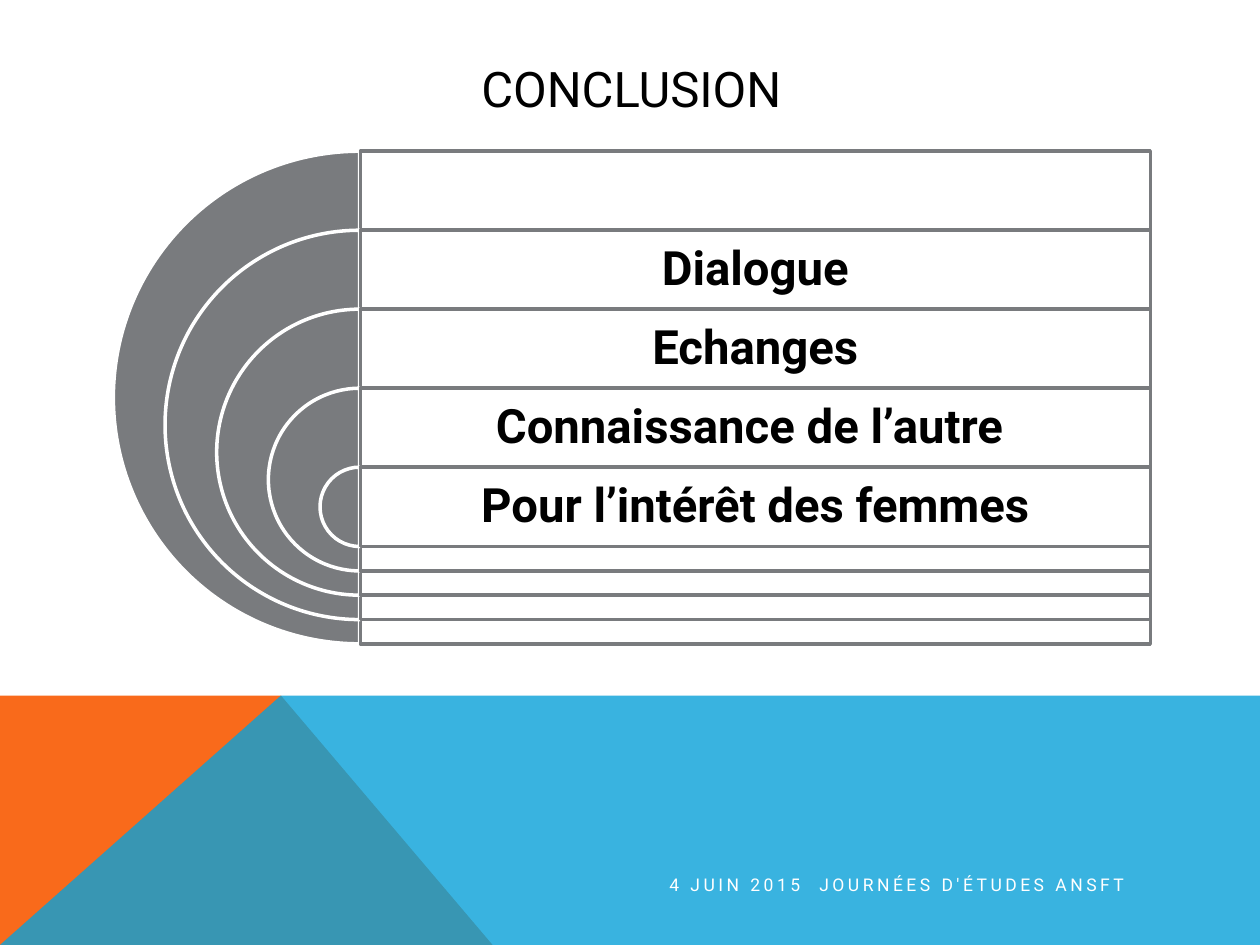
from dataclasses import dataclass

from lxml.etree import SubElement
from pptx import Presentation
from pptx.dml.color import RGBColor
from pptx.enum.shapes import MSO_SHAPE
from pptx.enum.text import MSO_ANCHOR, PP_ALIGN
from pptx.oxml.ns import qn
from pptx.shapes.autoshape import Shape
from pptx.slide import Slide
from pptx.util import Inches, Pt

BLACK = RGBColor(0x00, 0x00, 0x00)
WHITE = RGBColor(0xFF, 0xFF, 0xFF)
GREY = RGBColor(0x79, 0x7B, 0x7E)
ORANGE = RGBColor(0xF9, 0x6A, 0x1B)
BLUE = RGBColor(0x08, 0xA1, 0xD9)
FONT = "Roboto"

RING_LEFT, RING_TOP, RING_SIZE = 0.9, 1.2, 3.91
ROW_HEIGHT, RING_INSET = 0.627, 0.41
PANEL_LEFT, PANEL_WIDTH = 2.86, 6.27
ROWS = ["", "Dialogue", "Echanges", "Connaissance de l’autre ", "Pour l’intérêt des femmes"]


@dataclass
class Area:
    left: float
    top: float
    width: float
    height: float

    def lengths(self) -> list[Inches]:
        return [Inches(value) for value in (self.left, self.top, self.width, self.height)]


@dataclass
class Style:
    size: float
    color: RGBColor = BLACK
    bold: bool = False
    align: PP_ALIGN = PP_ALIGN.CENTER
    inset: float | None = None
    line_spacing: float | None = None
    letter_spacing: float = 0


TITLE = Style(28)
ROW = Style(27, bold=True, inset=0.11, line_spacing=0.9)
FOOTER = Style(10, WHITE, align=PP_ALIGN.RIGHT, letter_spacing=2)


def paint(shape: Shape, fill: RGBColor, line: RGBColor | None = None, opacity: int = 100) -> None:
    shape.shadow.inherit = False
    shape.fill.solid()
    shape.fill.fore_color.rgb = fill
    if opacity < 100:
        color = shape.fill._xPr.find(qn("a:solidFill"))[0]
        SubElement(color, qn("a:alpha")).set("val", str(opacity * 1000))
    if line is None:
        shape.line.fill.background()
    else:
        shape.line.color.rgb = line
        shape.line.width = Pt(2)


def add_polygon(page: Slide, points: list[tuple[float, float]], fill: RGBColor, opacity: int = 100) -> None:
    corners = [(Inches(x), Inches(y)) for x, y in points]
    builder = page.shapes.build_freeform(*corners[0], scale=1.0)
    builder.add_line_segments(corners[1:], close=True)
    paint(builder.convert_to_shape(), fill, opacity=opacity)


def add_text(page: Slide, area: Area, text: str, style: Style) -> None:
    box = page.shapes.add_textbox(*area.lengths())
    frame = box.text_frame
    frame.word_wrap = True
    frame.vertical_anchor = MSO_ANCHOR.MIDDLE
    if style.inset is not None:
        frame.margin_left = frame.margin_right = Inches(style.inset)
        frame.margin_top = frame.margin_bottom = Inches(style.inset)
    para = frame.paragraphs[0]
    para.alignment = style.align
    para.line_spacing = style.line_spacing
    para.font.name = FONT
    para.font.size = Pt(style.size)
    para.font.bold = style.bold
    para.font.color.rgb = style.color
    span = para.add_run()
    span.text = text
    if style.letter_spacing:
        span._r.get_or_add_rPr().set("spc", str(int(style.letter_spacing * 100)))


def add_layer(page: Slide, index: int, text: str) -> None:
    top = RING_TOP + index * ROW_HEIGHT
    size = RING_SIZE - 2 * index * RING_INSET
    ring = Area(RING_LEFT + index * RING_INSET, top, size, size)
    pie = page.shapes.add_shape(MSO_SHAPE.PIE, *ring.lengths())
    pie.adjustments[0] = 54
    pie.adjustments[1] = 162
    paint(pie, GREY, WHITE)
    panel = Area(PANEL_LEFT, top, PANEL_WIDTH, size)
    paint(page.shapes.add_shape(MSO_SHAPE.RECTANGLE, *panel.lengths()), WHITE, GREY, 90)
    if text:
        add_text(page, Area(PANEL_LEFT, top, PANEL_WIDTH, ROW_HEIGHT), text, ROW)


def main() -> None:
    deck = Presentation()
    deck.slide_width = Inches(10)
    deck.slide_height = Inches(7.5)
    page = deck.slides.add_slide(deck.slide_layouts[6])

    add_polygon(page, [(0, 7.5), (0, 5.52), (2.23, 5.52), (3.91, 7.5)], ORANGE)
    add_polygon(page, [(0, 7.5), (2.23, 5.52), (10, 5.52), (10, 7.5)], BLUE, 80)
    add_text(page, Area(0.9, 0.4, 8.22, 0.6), "CONCLUSION", TITLE)
    for index, text in enumerate(ROWS):
        add_layer(page, index, text)
    add_text(page, Area(3.85, 6.87, 5.17, 0.3), "4 JUIN 2015  JOURNÉES D'ÉTUDES ANSFT", FOOTER)

    deck.save("out.pptx")


if __name__ == "__main__":
    main()
